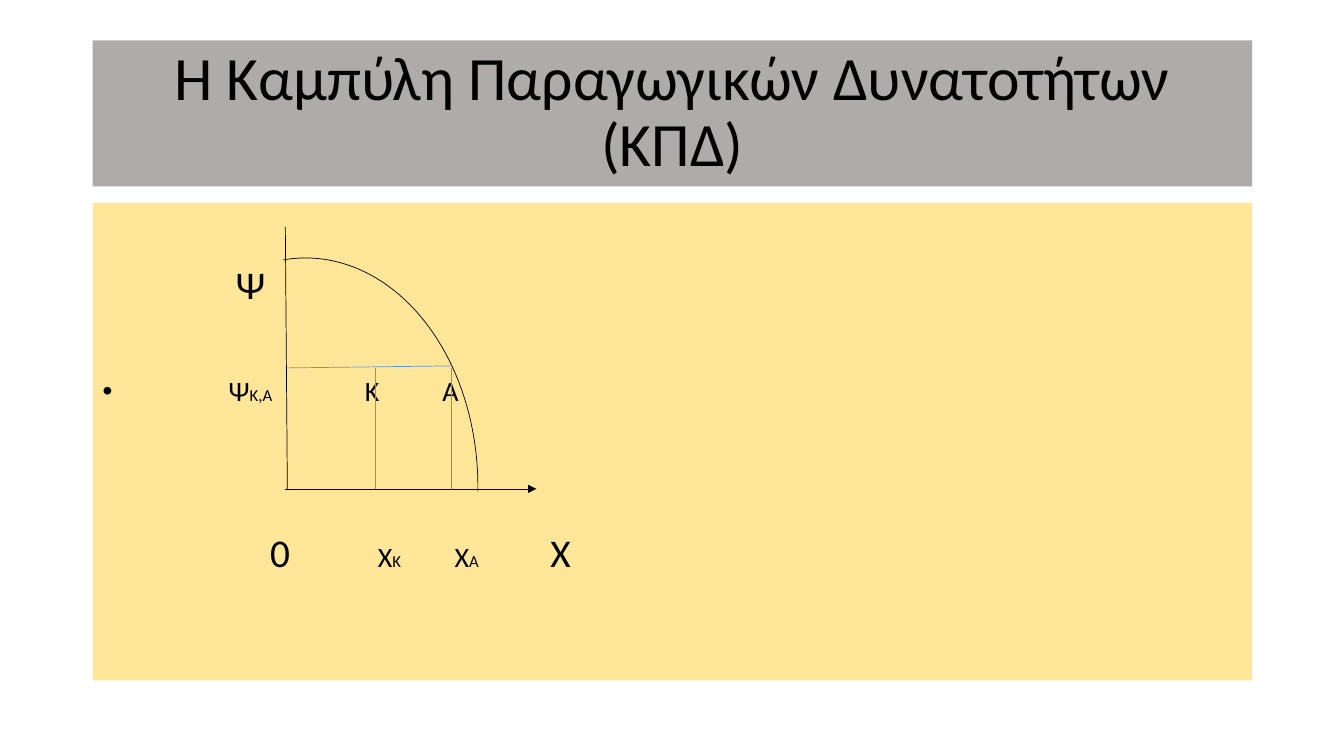
import pptx
import pptx.util
import pptx.dml.color
import pptx.enum.shapes
import pptx.enum.text
import pptx.oxml
import pptx.oxml.ns
from lxml import etree

Inches = pptx.util.Inches
Pt = pptx.util.Pt
Shape = pptx.enum.shapes.MSO_SHAPE
Anchor = pptx.enum.text.MSO_ANCHOR
Align = pptx.enum.text.PP_ALIGN
BLACK = "000000"
BLUE = "5B9BD5"
LEFT, WIDTH = 0.92, 11.5
AXIS, BASE, LEVEL = 2.83, 4.85, 3.65
POINT_K, POINT_A = 3.72, 4.48


def color(code):
    return pptx.dml.color.RGBColor.from_string(code)


def add(parent, tag, **attrs):
    node = etree.SubElement(parent, pptx.oxml.ns.qn(tag))
    for name, value in attrs.items():
        node.set(name, str(value))
    return node


def panel(slide, top, height, fill, anchor):
    box = slide.shapes.add_shape(
        Shape.RECTANGLE, Inches(LEFT), Inches(top), Inches(WIDTH), Inches(height))
    box.shadow.inherit = False
    box.fill.solid()
    box.fill.fore_color.rgb = color(fill)
    box.line.fill.background()
    box.text_frame.word_wrap = True
    box.text_frame.vertical_anchor = anchor
    return box.text_frame


def style(para, size, align):
    para.alignment = align
    para.line_spacing = 0.9
    para.font.name = "Calibri"
    para.font.size = Pt(size)
    para.font.color.rgb = color(BLACK)


def row(para, runs, tabs, size, before=0, bullet=False):
    props = para._p.get_or_add_pPr()
    if bullet:
        props.set("marL", str(Inches(0.25)))
        props.set("indent", str(-Inches(0.25)))
        add(props, "a:buFont", typeface="Arial")
        add(props, "a:buChar", char="•")
    stops = add(props, "a:tabLst")
    for stop in tabs:
        add(stops, "a:tab", pos=Inches(stop), algn="l")
    style(para, size, Align.LEFT)
    if before:
        para.space_before = Pt(before)
    for text, points in runs:
        run = para.add_run()
        run.text = text
        if points != size:
            run.font.size = Pt(points)


def line(slide, start, end, code, arrow=False):
    link = slide.shapes.add_connector(
        pptx.enum.shapes.MSO_CONNECTOR.STRAIGHT,
        *(Inches(value) for value in start + end))
    link.line.color.rgb = color(code)
    link.line.width = Pt(0.5)
    if arrow:
        add(link.line._get_or_add_ln(), "a:tailEnd", type="triangle")
    add(link._element.spPr, "a:effectLst")


def curve(slide):
    arc = slide.shapes.add_shape(
        Shape.ARC, Inches(1.32), Inches(2.56), Inches(3.42), Inches(4.54))
    arc.adjustments[0] = 158.65
    arc.adjustments[1] = 0.95
    arc.shadow.inherit = False
    arc.fill.background()
    arc.line.color.rgb = color(BLACK)
    arc.line.width = Pt(0.5)


def main():
    deck = pptx.Presentation()
    deck.slide_width = Inches(13.33)
    deck.slide_height = Inches(7.5)
    slide = deck.slides.add_slide(deck.slide_layouts[6])

    title = panel(slide, 0.4, 1.45, "AFABAB", Anchor.MIDDLE).paragraphs[0]
    title.text = "Η Καμπύλη Παραγωγικών Δυνατοτήτων (ΚΠΔ)"
    style(title, 44, Align.CENTER)

    body = panel(slide, 2.01, 4.74, "FFE699", Anchor.TOP)
    body.margin_top = Inches(0.63)
    row(body.paragraphs[0], [("\tΨ", 28)], [1.32], 28)
    row(body.add_paragraph(), [("\tΨ", 20), ("Κ,Α", 12), ("\tΚ\tΑ", 20)],
        [1.25, 2.6, 3.37], 20, 49, True)
    row(body.add_paragraph(),
        [("\t0", 28), ("\tΧ", 20), ("Κ", 12), ("\tΧ", 20), ("Α", 12), ("\tΧ", 28)],
        [1.66, 2.73, 3.49, 4.44], 28, 90)

    line(slide, (AXIS, 2.25), (2.85, BASE), BLACK)
    line(slide, (AXIS, BASE), (5.32, BASE), BLACK, True)
    curve(slide)
    line(slide, (AXIS, LEVEL), (POINT_A, 3.63), BLUE)
    for spot in (POINT_A, POINT_K):
        line(slide, (spot, LEVEL), (spot, BASE), BLUE)

    deck.save("out.pptx")


if __name__ == "__main__":
    main()
